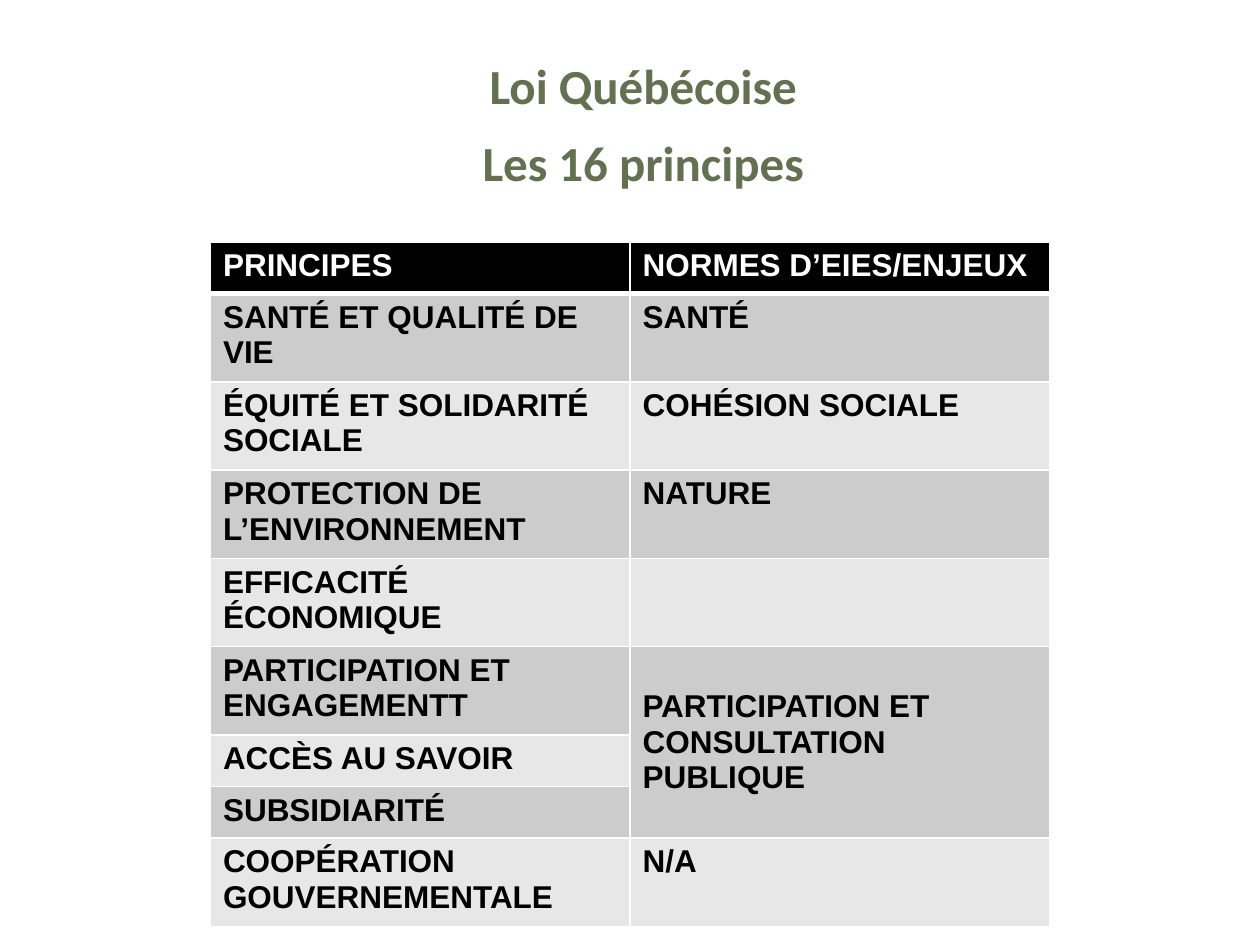
"""Build a slide listing Quebec's legal principles against impact-assessment standards."""
from lxml.etree import SubElement
from pptx import Presentation
from pptx.dml.color import RGBColor as RGB
from pptx.enum.text import PP_ALIGN as ALIGN
from pptx.oxml.ns import qn
from pptx.util import Inches, Pt

WHITE = RGB(0xFF, 0xFF, 0xFF)
BLACK = RGB(0x00, 0x00, 0x00)
OLIVE = RGB(0x63, 0x70, 0x52)
BANDS = RGB(0xE7, 0xE7, 0xE7), RGB(0xCC, 0xCC, 0xCC)

TITLE = ["Loi Québécoise", "Les 16 principes"]
ROWS = [
    ("PRINCIPES", "NORMES D’EIES/ENJEUX"),
    ("SANTÉ ET QUALITÉ DE VIE", "SANTÉ"),
    ("ÉQUITÉ ET SOLIDARITÉ SOCIALE", "COHÉSION SOCIALE"),
    ("PROTECTION DE L’ENVIRONNEMENT", "NATURE"),
    ("EFFICACITÉ ÉCONOMIQUE", ""),
    ("PARTICIPATION ET ENGAGEMENTT", "PARTICIPATION ET CONSULTATION PUBLIQUE"),
    ("ACCÈS AU SAVOIR", ""),
    ("SUBSIDIARITÉ", ""),
    ("COOPÉRATION GOUVERNEMENTALE", "N/A"),
]


class SlideBuilder:
    def __init__(self, slide):
        self.slide = slide
        self.title_font, self.table_font = "Calibri", "Arial"

    def style(self, p, name, size, color):
        p.font.name, p.font.size, p.font.bold = name, Pt(size), True
        p.font.color.rgb = color

    def title(self, lines, left, top, width, height):
        box = self.slide.shapes.add_textbox(
            Inches(left), Inches(top), Inches(width), Inches(height))
        tf = box.text_frame
        tf.word_wrap = True
        tf.margin_left = tf.margin_right = 0
        tf.text = "\n".join(lines)
        for p in tf.paragraphs:
            p.alignment, p.line_spacing = ALIGN.CENTER, 0.9
            p.space_before, p.space_after = Pt(12), Pt(2)
            self.style(p, self.title_font, 28, OLIVE)

    def borders(self, cell, top, bottom):
        tc_pr = cell._tc.get_or_add_tcPr()
        for side, width in (("L", 1), ("R", 1), ("T", top), ("B", bottom)):
            ln = SubElement(tc_pr, qn(f"a:ln{side}"), w=str(Pt(width)))
            fill = SubElement(ln, qn("a:solidFill"))
            SubElement(fill, qn("a:srgbClr"), val=str(WHITE))

    def table(self, rows, left, top, col_width, row_height):
        cols = len(rows[0])
        table = self.slide.shapes.add_table(
            len(rows), cols, Inches(left), Inches(top),
            Inches(col_width * cols), Inches(row_height * len(rows))).table
        for i, row in enumerate(rows):
            table.rows[i].height = Inches(row_height)
            for j, text in enumerate(row):
                cell = table.cell(i, j)
                self.borders(cell, 3 if i == 1 else 1, 3 if i == 0 else 1)
                cell.fill.solid()
                cell.fill.fore_color.rgb = BANDS[i % 2] if i else BLACK
                cell.text = text
                self.style(cell.text_frame.paragraphs[0], self.table_font, 18,
                           BLACK if i else WHITE)
        return table


def main():
    prs = Presentation()
    prs.slide_width, prs.slide_height = Inches(10), Inches(7.5)
    s = SlideBuilder(prs.slides.add_slide(prs.slide_layouts[6]))
    s.title(TITLE, 0.98, 0.44, 8.25, 1.18)
    table = s.table(ROWS, 1.67, 1.92, 3.33, 0.41)
    consultation = table.cell(5, 1)
    consultation.merge(table.cell(7, 1))
    consultation.margin_top = Inches(0.34)
    prs.save("out.pptx")


if __name__ == "__main__":
    main()
